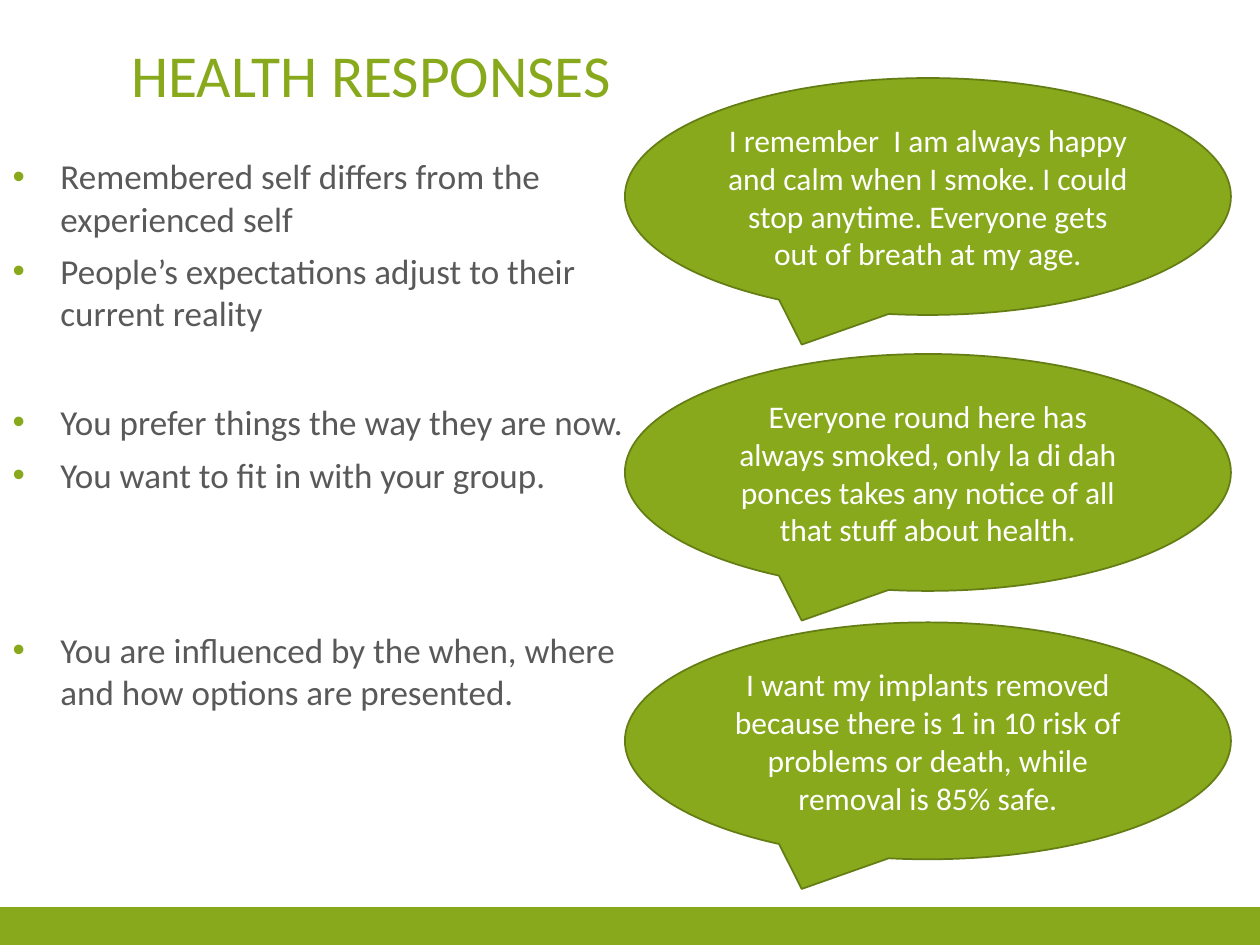
from dataclasses import dataclass

from lxml import etree
from pptx import Presentation
from pptx import util as u
from pptx.dml.color import RGBColor
from pptx.enum import shapes, text
from pptx.oxml import ns


@dataclass(frozen=True)
class Theme:
    """Colours, font and type sizes of the slide."""
    green: str = "87A91B"
    dark_green: str = "647D14"
    grey: str = "595959"
    white: str = "FFFFFF"
    font: str = "Calibri"
    title: int = 34
    body: int = 20
    speech: int = 18


THEME = Theme()
WIDTH, HEIGHT = u.Inches(10), u.Inches(7.5)
COMPARISON_LAYOUT = 4
TITLE_BOX = (1.2, 1.6, 56.5, 10.8)
CALLOUT_LEFT, CALLOUT_WIDTH, CALLOUT_HEIGHT = 49.6, 48.1, 25.07

ROWS = [
    ((0, 15.73, 46.7, 26.67),
     ["Remembered self differs from the experienced self",
      "People’s expectations adjust to their current reality"],
     8.27,
     "I remember  I am always happy and calm when I smoke. I could stop anytime. "
     "Everyone gets out of breath at my age."),
    ((0, 41.73, 51.7, 12.93),
     ["You prefer things the way they are now.",
      "You want to fit in with your group."],
     37.47,
     "Everyone round here has always smoked, only la di dah ponces takes any "
     "notice of all that stuff about health."),
    ((0, 65.87, 51.7, 21.73),
     ["You are influenced by the when, where and how options are presented."],
     65.87,
     "I want my implants removed because there is 1 in 10 risk of problems or "
     "death, while removal is 85% safe."),
]


def share(left, top, width, height):
    """Turn percentages of the slide into lengths."""
    return (int(WIDTH * left / 100), int(HEIGHT * top / 100),
            int(WIDTH * width / 100), int(HEIGHT * height / 100))


def place(sp, box):
    """Move a placeholder to a box given in percentages."""
    sp.left, sp.top, sp.width, sp.height = share(*box)


def write(tf, lines, *, size, color, align, anchor, spacing=1.0, before=0):
    """Fill a text frame with formatted paragraphs and return them."""
    tf.word_wrap = True
    tf.auto_size = text.MSO_AUTO_SIZE.NONE
    tf.vertical_anchor = anchor
    for i, line in enumerate(lines):
        p = tf.add_paragraph() if i else tf.paragraphs[0]
        p.alignment, p.line_spacing = align, spacing
        p.space_before = u.Pt(before)
        r = p.add_run()
        r.text = line
        r.font.name, r.font.size, r.font.bold = THEME.font, u.Pt(size), False
        r.font.color.rgb = RGBColor.from_string(color)
    return tf.paragraphs


def add_bullet(p, color):
    """Give a paragraph a coloured bullet with a hanging indent."""
    pPr = p._p.get_or_add_pPr()
    indent = u.Inches(0.38)
    pPr.set("marL", str(indent))
    pPr.set("indent", str(-indent))
    clr = etree.SubElement(pPr, ns.qn("a:buClr"))
    etree.SubElement(clr, ns.qn("a:srgbClr"), val=color)
    etree.SubElement(pPr, ns.qn("a:buFont"), typeface="Arial")
    etree.SubElement(pPr, ns.qn("a:buChar"), char="•")


def set_title(sp, title):
    """Place and write the slide title."""
    place(sp, TITLE_BOX)
    write(sp.text_frame, [title], size=THEME.title, color=THEME.green,
          align=text.PP_ALIGN.CENTER, anchor=text.MSO_ANCHOR.BOTTOM, spacing=0.9)


def set_list(sp, box, items):
    """Place a body placeholder and write its bulleted list."""
    place(sp, box)
    for p in write(sp.text_frame, items, size=THEME.body, color=THEME.grey,
                   align=text.PP_ALIGN.LEFT, anchor=text.MSO_ANCHOR.TOP, before=6):
        add_bullet(p, THEME.green)


def add_filled(s, kind, box, line=None):
    """Add a green preset shape with an optional outline."""
    sp = s.shapes.add_shape(kind, *share(*box))
    sp.shadow.inherit = False
    sp.fill.solid()
    sp.fill.fore_color.rgb = RGBColor.from_string(THEME.green)
    if line:
        sp.line.color.rgb = RGBColor.from_string(line)
        sp.line.width = u.Pt(1)
    else:
        sp.line.fill.background()
    return sp


def add_callout(s, top, speech):
    """Add a speech bubble in the right column."""
    sp = add_filled(s, shapes.MSO_SHAPE.OVAL_CALLOUT,
                    (CALLOUT_LEFT, top, CALLOUT_WIDTH, CALLOUT_HEIGHT),
                    THEME.dark_green)
    write(sp.text_frame, [speech], size=THEME.speech, color=THEME.white,
          align=text.PP_ALIGN.CENTER, anchor=text.MSO_ANCHOR.MIDDLE)


def main():
    """Build the slide and save it."""
    prs = Presentation()
    prs.slide_width, prs.slide_height = WIDTH, HEIGHT
    s = prs.slides.add_slide(prs.slide_layouts[COMPARISON_LAYOUT])
    title, *bodies = list(s.placeholders)
    add_filled(s, shapes.MSO_SHAPE.RECTANGLE, (0, 96, 100, 4))
    set_title(title, "HEALTH RESPONSES")
    for body, (box, items, top, speech) in zip(bodies, ROWS):
        set_list(body, box, items)
        add_callout(s, top, speech)
    for spare in bodies[len(ROWS):]:
        spare.element.getparent().remove(spare.element)
    prs.save("out.pptx")


if __name__ == "__main__":
    main()
